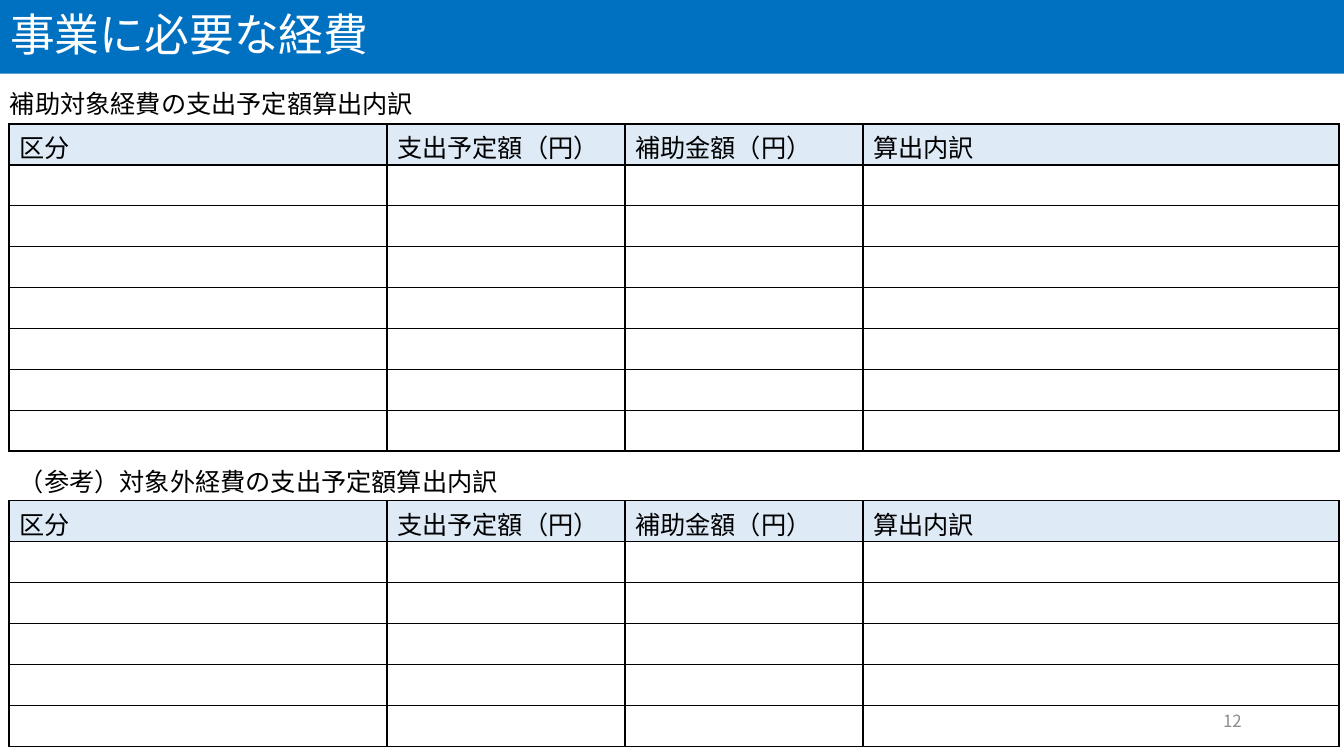
from dataclasses import dataclass
from lxml.etree import SubElement
from pptx import Presentation
from pptx.dml.color import RGBColor as Rgb
from pptx.enum.text import MSO_ANCHOR as Anchor, MSO_AUTO_SIZE as AutoSize, PP_ALIGN as Align
from pptx.oxml.ns import qn
from pptx.util import Pt

HEADING = "事業に必要な経費"
PAGE_NUMBER = "12"
COLUMNS = [("区分", 270), ("支出予定額（円）", 170), ("補助金額（円）", 170), ("算出内訳", 340)]
SECTIONS = [
    {"caption": "補助対象経費の支出予定額算出内訳", "left": 0, "top": 59.8, "gap": 28.8, "blank_rows": 7},
    {"caption": "（参考）対象外経費の支出予定額算出内訳", "left": 6.5, "top": 329.8, "gap": 28, "blank_rows": 5},
]
TABLE_LEFT = 6.5
ROW_HEIGHT = 29.2


@dataclass(frozen=True)
class Theme:
    latin: str = "Calibri"
    japanese: str = "Noto Sans CJK JP"
    banner: str = "0070C0"
    header: str = "DEEBF7"
    ink: str = "000000"
    paper: str = "FFFFFF"
    muted: str = "8C8C8C"
    heading_size: int = 32
    body_size: int = 18
    number_size: int = 12
    border: float = 1


THEME = Theme()


def write(frame, text, size, color, latin=THEME.japanese, align=Align.LEFT):
    frame.text = text
    paragraph = frame.paragraphs[0]
    paragraph.alignment = align
    font = paragraph.font
    font.size, font.name = Pt(size), latin
    font.color.rgb = Rgb.from_string(color)
    defaults = paragraph._p.get_or_add_pPr().get_or_add_defRPr()
    SubElement(defaults, qn("a:ea"), typeface=THEME.japanese)
    return paragraph


def add_label(slide, text, box, size, color, **style):
    frame = slide.shapes.add_textbox(*map(Pt, box)).text_frame
    frame.word_wrap = True
    write(frame, text, size, color, **style)
    return frame


def draw_borders(cell):
    properties = cell._tc.get_or_add_tcPr()
    for position, side in enumerate(("lnL", "lnR", "lnT", "lnB")):
        line = properties.makeelement(qn(f"a:{side}"), {"w": str(Pt(THEME.border))})
        fill = SubElement(line, qn("a:solidFill"))
        SubElement(fill, qn("a:srgbClr"), val=THEME.ink)
        properties.insert(position, line)


def add_expenses(slide, top, blank_rows):
    rows = blank_rows + 1
    width = sum(width for _, width in COLUMNS)
    box = map(Pt, (TABLE_LEFT, top, width, rows * ROW_HEIGHT))
    expenses = slide.shapes.add_table(rows, len(COLUMNS), *box).table
    expenses.first_row = expenses.horz_banding = False
    for row in expenses.rows:
        row.height = Pt(ROW_HEIGHT)
    for column, (_, column_width) in zip(expenses.columns, COLUMNS):
        column.width = Pt(column_width)
    for cell in expenses.iter_cells():
        cell.margin_top, cell.margin_bottom = Pt(3), Pt(0)
        cell.fill.background()
        draw_borders(cell)
    for cell, (name, _) in zip(expenses.rows[0].cells, COLUMNS):
        cell.fill.solid()
        cell.fill.fore_color.rgb = Rgb.from_string(THEME.header)
        write(cell.text_frame, name, THEME.body_size, THEME.ink)


def add_heading(slide):
    heading = slide.shapes.title
    heading.left, heading.top, heading.width, heading.height = map(Pt, (0, 0, 960, 52.6))
    heading.fill.solid()
    heading.fill.fore_color.rgb = Rgb.from_string(THEME.banner)
    frame = heading.text_frame
    frame.auto_size = AutoSize.NONE
    frame.vertical_anchor = Anchor.MIDDLE
    paragraph = write(frame, HEADING, THEME.heading_size, THEME.paper, latin=THEME.latin)
    paragraph.line_spacing = 0.9


def main():
    deck = Presentation()
    deck.slide_width, deck.slide_height = Pt(960), Pt(540)
    slide = deck.slides.add_slide(deck.slide_layouts[5])
    add_heading(slide)
    for section in SECTIONS:
        caption_box = (section["left"], section["top"], 471, 29)
        add_label(slide, section["caption"], caption_box, THEME.body_size, THEME.ink)
        add_expenses(slide, section["top"] + section["gap"], section["blank_rows"])
    number = add_label(slide, PAGE_NUMBER, (678, 500.5, 216, 28.8),
                       THEME.number_size, THEME.muted, align=Align.RIGHT)
    number.vertical_anchor = Anchor.MIDDLE
    deck.save("out.pptx")


if __name__ == "__main__":
    main()
